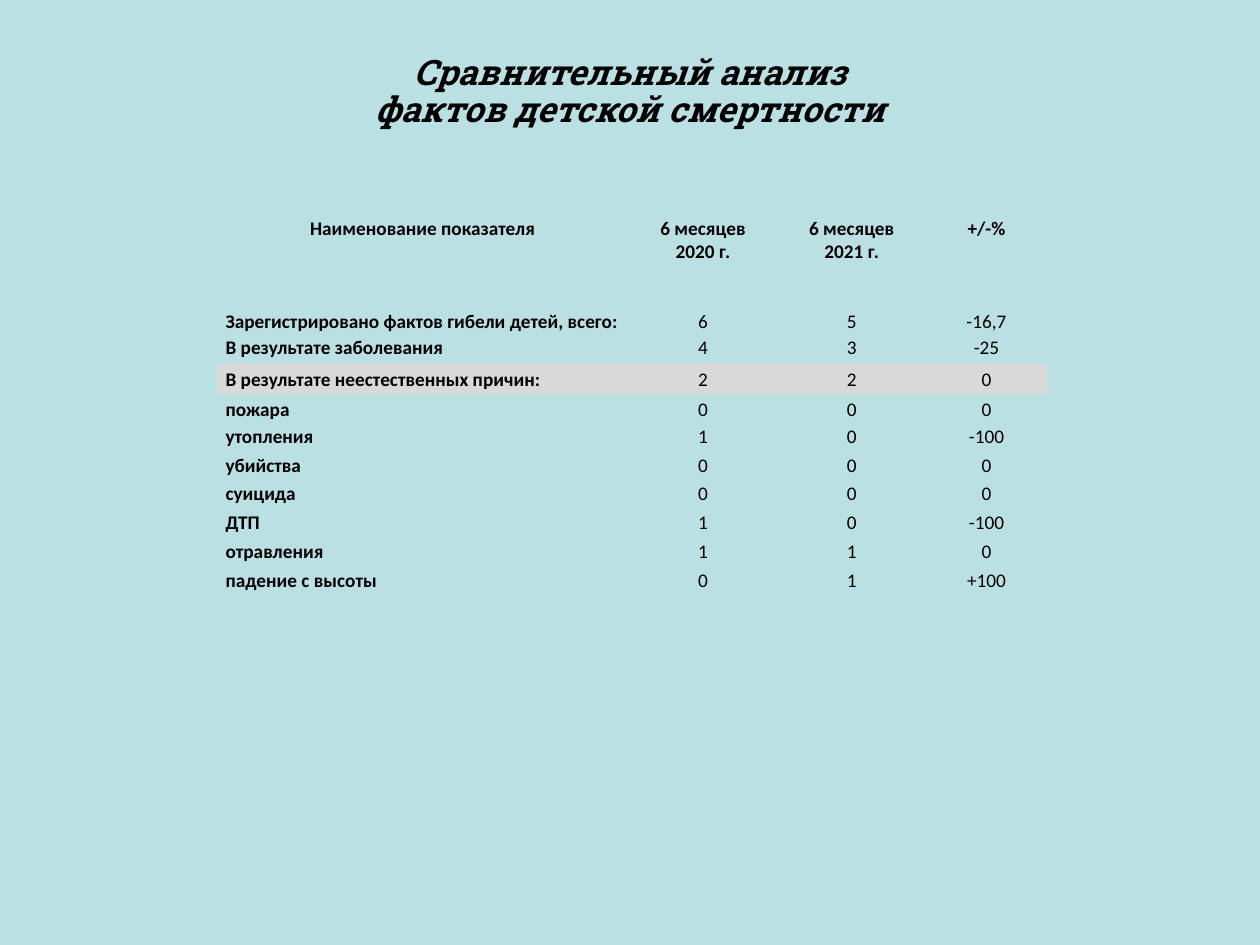
from dataclasses import dataclass
from typing import Any

from pptx import Presentation
from pptx.dml.color import RGBColor
from pptx.enum.text import MSO_ANCHOR as Anchor, PP_ALIGN as Align
from pptx.util import Inches, Pt


@dataclass(frozen=True)
class Theme:
    background: RGBColor = RGBColor.from_string("BBE0E3")
    highlight: RGBColor = RGBColor.from_string("D9D9D9")
    ink: RGBColor = RGBColor.from_string("000000")
    title_font: str = "Roboto Slab"
    table_font: str = "Calibri"
    title_size: Pt = Pt(20)
    table_size: Pt = Pt(11)
    plain_style: str = "{2D5ABB26-0587-4C30-8999-92F81FD0307C}"


@dataclass(frozen=True)
class Area:
    column: float
    row: float
    columns: float
    rows: float

    def lengths(self) -> tuple[int, ...]:
        return tuple(grid(value) for value in (self.column, self.row, self.columns, self.rows))


@dataclass(frozen=True)
class Indicator:
    name: str
    values: tuple[str, str, str]
    rows: float = 2.3
    highlighted: bool = False
    rows_above: float = 0


THEME = Theme()
GRID_COLUMNS, GRID_ROWS = 100, 75
GRID_STEP = Inches(0.1)
TITLE_AREA = Area(5, 3, 90, 8.7)
TABLE_AREA = Area(17.2, 17.2, 65.9, 30)
COLUMN_WIDTHS = (32.7, 11.8, 11.8, 9.6)
HEADER_ROWS = 3.7
SIDE_MARGIN = 0.7

TITLE = ("Сравнительный анализ", "фактов детской смертности")
HEADERS = (
    ("Наименование показателя",),
    ("6 месяцев", "2020 г."),
    ("6 месяцев", "2021 г."),
    ("+/-%",),
)
INDICATORS = (
    Indicator("Зарегистрировано фактов гибели детей, всего:", ("6", "5", "-16,7"), 5.5, rows_above=3.4),
    Indicator("В результате заболевания", ("4", "3", "-25"), 2.5),
    Indicator("В результате неестественных причин:", ("2", "2", "0"), 2.4, highlighted=True),
    Indicator("пожара", ("0", "0", "0"), 2.1),
    Indicator("утопления", ("1", "0", "-100")),
    Indicator("убийства", ("0", "0", "0")),
    Indicator("суицида", ("0", "0", "0")),
    Indicator("ДТП", ("1", "0", "-100")),
    Indicator("отравления", ("1", "1", "0")),
    Indicator("падение с высоты", ("0", "1", "+100")),
)


def grid(steps: float) -> int:
    return round(steps * GRID_STEP)


def apply(target: Any, formats: dict[str, Any]) -> None:
    for name, value in formats.items():
        setattr(target, name, value)


def style_font(font: Any, **formats: Any) -> None:
    apply(font, formats)
    font.color.rgb = THEME.ink


def draw_title(slide: Any) -> None:
    frame = slide.shapes.add_textbox(*TITLE_AREA.lengths()).text_frame
    apply(frame, {"word_wrap": True, "vertical_anchor": Anchor.MIDDLE})
    paragraph = frame.paragraphs[0]
    apply(paragraph, {"alignment": Align.CENTER, "line_spacing": 0.9})
    for index, line in enumerate(TITLE):
        if index:
            paragraph.add_line_break()
        run = paragraph.add_run()
        run.text = line
        style_font(run.font, name=THEME.title_font, size=THEME.title_size, bold=True, italic=True)


def fill_cell(cell: Any, lines: tuple[str, ...], bold: bool, paragraph_formats: dict[str, Any],
              rows_above: float = 0, highlighted: bool = False) -> None:
    margin = grid(SIDE_MARGIN)
    apply(cell, {"margin_left": margin, "margin_right": margin,
                 "margin_top": grid(rows_above), "margin_bottom": 0})
    if highlighted:
        cell.fill.solid()
        cell.fill.fore_color.rgb = THEME.highlight
    else:
        cell.fill.background()
    cell.text = "\n".join(lines)
    for paragraph in cell.text_frame.paragraphs:
        apply(paragraph, paragraph_formats)
        for run in paragraph.runs:
            style_font(run.font, name=THEME.table_font, size=THEME.table_size, bold=bold)


def draw_table(slide: Any) -> None:
    table = slide.shapes.add_table(len(INDICATORS) + 1, len(HEADERS), *TABLE_AREA.lengths()).table
    apply(table, {"first_row": False, "horz_banding": False})
    table._tbl.tblPr[0].text = THEME.plain_style
    for column, width in zip(table.columns, COLUMN_WIDTHS):
        column.width = grid(width)
    heights = (HEADER_ROWS, *(indicator.rows for indicator in INDICATORS))
    for row, height in zip(table.rows, heights):
        row.height = grid(height)
    for column, lines in enumerate(HEADERS):
        fill_cell(table.cell(0, column), lines, True, {"alignment": Align.CENTER})
    for row, indicator in enumerate(INDICATORS, start=1):
        for column, text in enumerate((indicator.name, *indicator.values)):
            is_name = column == 0
            formats = {"alignment": Align.JUSTIFY if is_name else Align.CENTER,
                       "line_spacing": 1.15, "space_after": Pt(10)}
            fill_cell(table.cell(row, column), (text,), is_name, formats,
                      indicator.rows_above, indicator.highlighted)


def main() -> None:
    presentation = Presentation()
    apply(presentation, {"slide_width": grid(GRID_COLUMNS), "slide_height": grid(GRID_ROWS)})
    slide = presentation.slides.add_slide(presentation.slide_layouts[6])
    slide.background.fill.solid()
    slide.background.fill.fore_color.rgb = THEME.background
    draw_title(slide)
    draw_table(slide)
    presentation.save("out.pptx")


if __name__ == "__main__":
    main()
